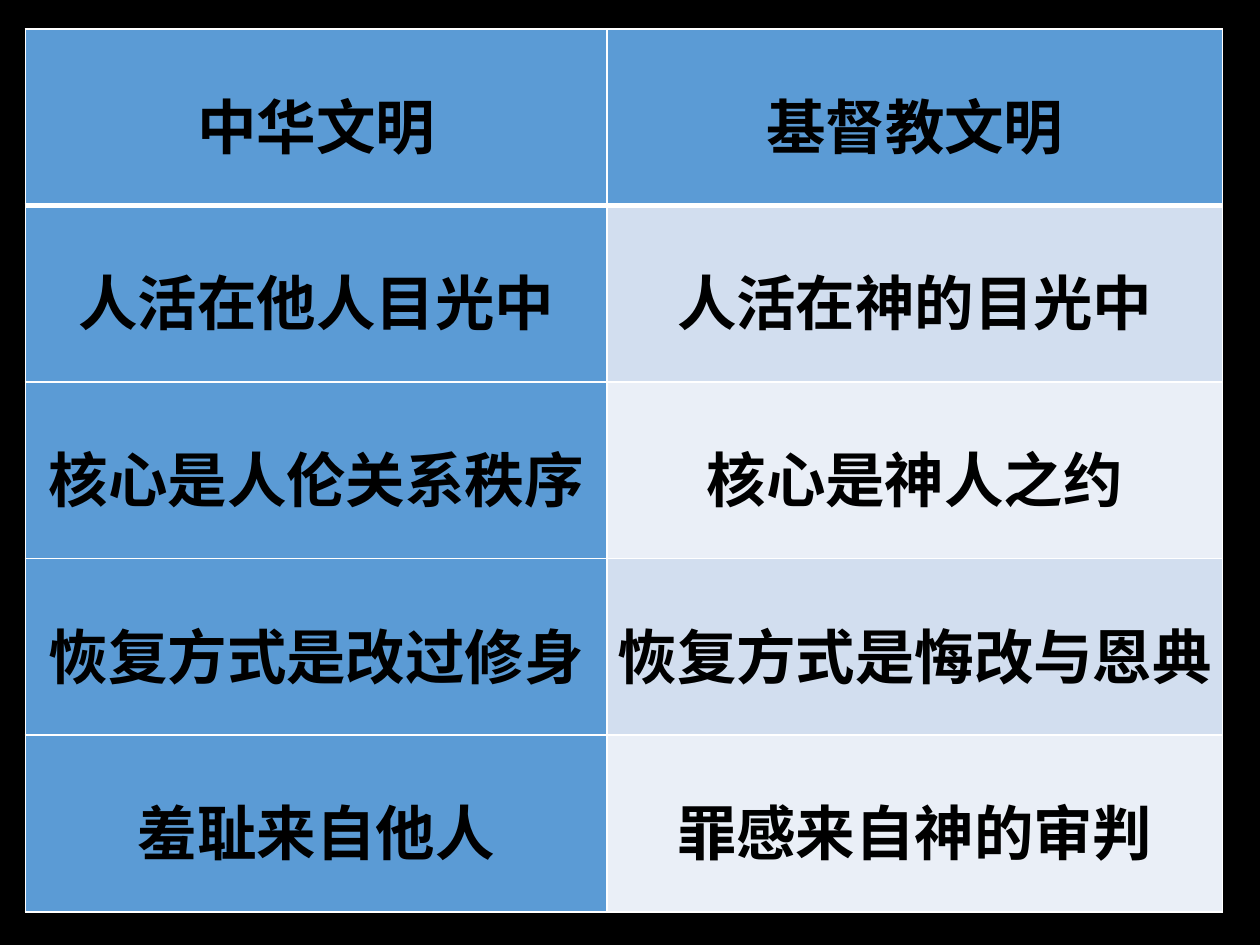
from lxml import etree
from pptx import Presentation
from pptx.dml.color import RGBColor
from pptx.enum.text import MSO_ANCHOR, PP_ALIGN
from pptx.oxml.ns import qn
from pptx.util import Cm, Pt

MIDDLE = MSO_ANCHOR.MIDDLE
CENTER = PP_ALIGN.CENTER

BLACK = RGBColor(0x00, 0x00, 0x00)
WHITE = RGBColor(0xFF, 0xFF, 0xFF)
BLUE = RGBColor(0x5B, 0x9B, 0xD5)
BANDS = (RGBColor(0xD2, 0xDE, 0xEF), RGBColor(0xEA, 0xEF, 0xF7))

FONT = "Noto Sans CJK SC"
SIZE = Pt(34)
THIN, THICK = Pt(1), Pt(3)

# Content: header first, then the compared pairs
ROWS = [
    ("中华文明", "基督教文明"),
    ("人活在他人目光中", "人活在神的目光中"),
    ("核心是人伦关系秩序", "核心是神人之约"),
    ("恢复方式是改过修身", "恢复方式是悔改与恩典"),
    ("羞耻来自他人", "罪感来自神的审判"),
]
LEFT, TOP = Cm(0.51), Cm(0.58)
WIDTHS = (Cm(11.73), Cm(12.4))
HEIGHT = Cm(3.56)
INSET = Cm(0.03)


def add_lines(cell, row):
    """Draw white borders, heavy between header and body."""
    props = cell._tc.get_or_add_tcPr()
    heavy = {(0, "B"), (1, "T")}
    for side in "LRTB":
        width = THICK if (row, side) in heavy else THIN
        line = etree.SubElement(props, qn(f"a:ln{side}"), w=str(width))
        fill = etree.SubElement(line, qn("a:solidFill"))
        etree.SubElement(fill, qn("a:srgbClr"), val=str(WHITE))


def set_text(cell, text):
    cell.vertical_anchor = MIDDLE
    cell.margin_left = cell.margin_right = INSET
    cell.margin_top = cell.margin_bottom = INSET
    cell.text_frame.text = text
    para = cell.text_frame.paragraphs[0]
    para.alignment = CENTER
    para.line_spacing = 1.15
    para.space_after = Pt(10)
    run = para.runs[0]
    font = run.font
    font.name, font.size, font.bold = FONT, SIZE, True
    font.color.rgb = BLACK
    # Chinese glyphs take the East Asian face
    etree.SubElement(font._element, qn("a:ea"), typeface=FONT)


def main():
    deck = Presentation()
    deck.slide_width, deck.slide_height = Cm(25.4), Cm(19.05)
    slide = deck.slides.add_slide(deck.slide_layouts[6])
    back = slide.background.fill
    back.solid()
    back.fore_color.rgb = BLACK

    # Table grid
    frame = slide.shapes.add_table(len(ROWS), len(WIDTHS), LEFT, TOP,
                                   sum(WIDTHS), HEIGHT * len(ROWS))
    table = frame.table
    for col, width in zip(table.columns, WIDTHS):
        col.width = width

    # Cells: blue header and first column, banded second column
    for r, pair in enumerate(ROWS):
        table.rows[r].height = HEIGHT
        for c, text in enumerate(pair):
            cell = table.cell(r, c)
            set_text(cell, text)
            add_lines(cell, r)
            cell.fill.solid()
            body = r > 0 and c > 0
            cell.fill.fore_color.rgb = BANDS[(r - 1) % 2] if body else BLUE

    deck.save("out.pptx")


if __name__ == "__main__":
    main()
